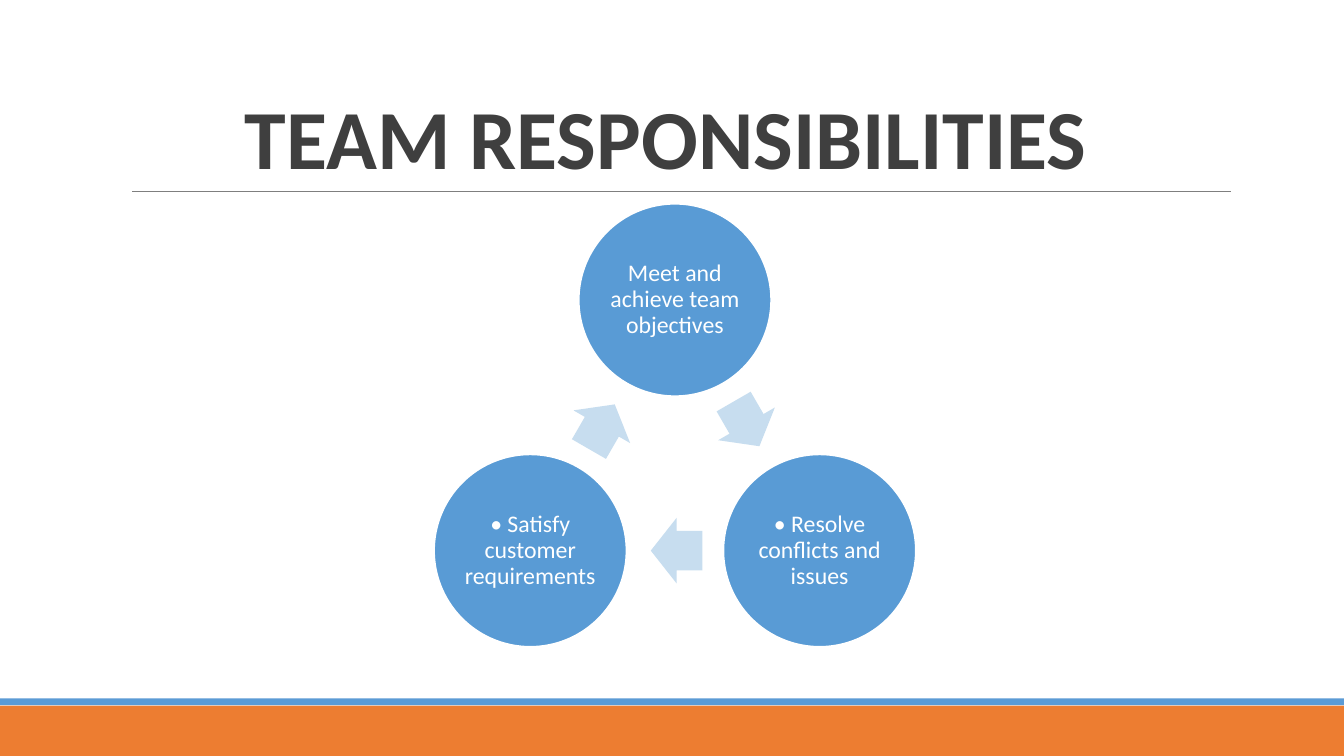
import math

from pptx import Presentation, util as u
from pptx.dml import color
from pptx.enum import shapes, text
from pptx.oxml import xmlchemy as xml


def paint(tone):
    return color.RGBColor.from_string(tone)


def apply(item, values):
    for name, value in values.items():
        setattr(item, name, value)


class Deck:
    """Holds the style and the current slide."""

    font = "Calibri"
    dark, white, grey = "3F3F3F", "FFFFFF", "7F7F7F"
    blue, disc, pale, orange = "5B9BD5", "599BD5", "C7DDEF", "ED7D31"

    def __init__(self):
        self.file = Presentation()
        apply(self.file, {"slide_width": u.Cm(33.87), "slide_height": u.Cm(19.05)})
        self.slide = self.file.slides.add_slide(self.file.slide_layouts[5])

    def label(self, shape, words, size, tone, inset, frame, para, bold=False):
        box = shape.text_frame
        sides, ends = inset
        apply(box, {"text": words, "word_wrap": True,
                    "auto_size": text.MSO_AUTO_SIZE.NONE,
                    "margin_left": u.Cm(sides), "margin_right": u.Cm(sides),
                    "margin_top": u.Cm(ends), "margin_bottom": u.Cm(ends),
                    **frame})
        line = box.paragraphs[0]
        apply(line, {"alignment": text.PP_ALIGN.CENTER, **para})
        run = line.runs[0].font
        apply(run, {"name": self.font, "size": u.Pt(size), "bold": bold})
        run.color.rgb = paint(tone)

    def title(self, words, left, top, width, height):
        head = self.slide.shapes.title
        apply(head, {"left": u.Cm(left), "top": u.Cm(top),
                     "width": u.Cm(width), "height": u.Cm(height)})
        self.label(head, words, 60, self.dark, (0.25, 0.13),
                   {"vertical_anchor": text.MSO_ANCHOR.BOTTOM},
                   {"line_spacing": 0.85}, True)

    def shape(self, kind, left, top, width, height, fill, edge=None):
        item = self.slide.shapes.add_shape(
            kind, u.Cm(left), u.Cm(top), u.Cm(width), u.Cm(height))
        item.shadow.inherit = False
        item.fill.solid()
        item.fill.fore_color.rgb = paint(fill)
        if edge:
            item.line.color.rgb = paint(edge)
            item.line.width = u.Pt(1.25)
        else:
            item.line.fill.background()
        return item

    def band(self, top, height, fill):
        self.shape(shapes.MSO_SHAPE.RECTANGLE, 0, top, 33.87, height, fill)

    def rule(self, left, right, top):
        item = self.slide.shapes.add_connector(
            shapes.MSO_CONNECTOR.STRAIGHT,
            u.Cm(left), u.Cm(top), u.Cm(right), u.Cm(top))
        item.line.color.rgb = paint(self.grey)
        item.line.width = u.Pt(0.75)
        item.element.spPr.append(xml.OxmlElement("a:effectLst"))

    def circle(self, x, y, size, words):
        item = self.shape(shapes.MSO_SHAPE.OVAL, x - size / 2, y - size / 2,
                          size, size, self.disc, self.white)
        self.label(item, words, 17, self.white, (0.05, 0.05),
                   {"vertical_anchor": text.MSO_ANCHOR.MIDDLE},
                   {"line_spacing": 0.9, "space_after": u.Pt(6)})

    def arrow(self, x, y, width, height, turn):
        item = self.shape(shapes.MSO_SHAPE.RIGHT_ARROW, x - width / 2,
                          y - height / 2, width, height, self.pale)
        item.rotation = turn
        item.adjustments[0] = 0.6
        item.adjustments[1] = 0.5

    def cycle(self, x, y, reach, duties):
        step = 360 / len(duties)
        near = reach * math.cos(math.radians(step / 2))
        for place, words in enumerate(duties):
            angle = math.radians(place * step - 90)
            self.circle(x + reach * math.cos(angle),
                        y + reach * math.sin(angle), 4.85, words)
            turn = (place + 0.5) * step
            mid, flow = math.radians(turn - 90), math.radians(turn)
            self.arrow(x + near * math.cos(mid) - 0.04 * math.cos(flow),
                       y + near * math.sin(mid) - 0.04 * math.sin(flow),
                       1.3, 1.65, turn)


def main():
    deck = Deck()
    deck.band(17.78, 1.27, deck.orange)
    deck.band(17.6, 0.17, deck.blue)
    deck.rule(3.33, 31.01, 4.82)
    deck.title("TEAM RESPONSIBILITIES ", 3.05, 0.79, 27.94, 4.04)
    deck.cycle(17.01, 11.77, 4.21, (
        "Meet and achieve team objectives",
        "• Resolve conflicts and issues",
        "• Satisfy customer requirements"))
    deck.file.save("out.pptx")


if __name__ == "__main__":
    main()
